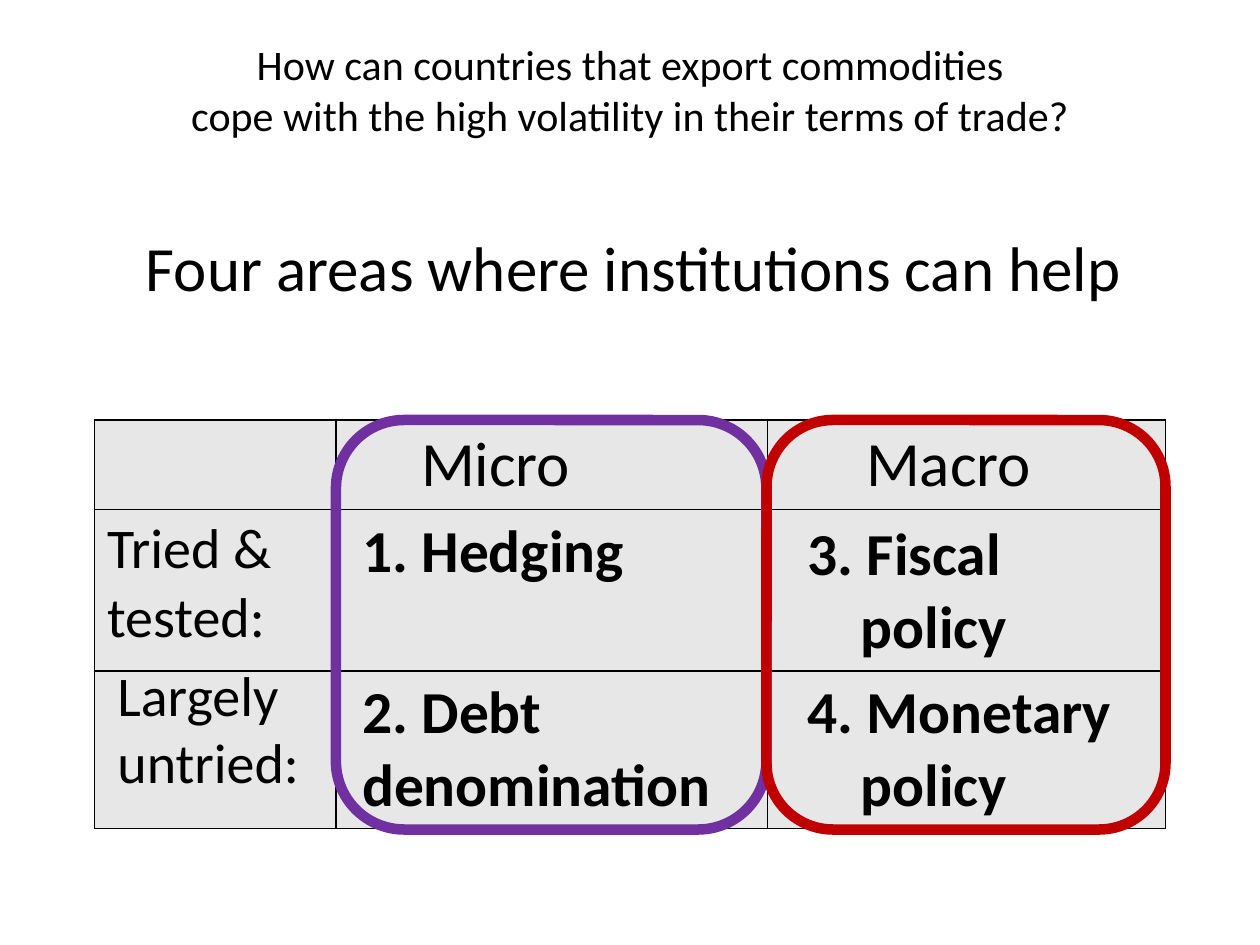
import dataclasses

import pptx
import pptx.dml.color
import pptx.enum.shapes
import pptx.enum.text
import pptx.oxml
import pptx.oxml.ns
import pptx.util

Pt = pptx.util.Pt


@dataclasses.dataclass(frozen=True)
class Theme:
    font: str = "Calibri"
    text: str = "000000"
    cell: str = "E7E7E7"
    border: str = "000000"
    micro: str = "7030A0"
    macro: str = "C00000"
    title_size: int = 24
    heading_size: int = 36
    label_size: int = 32
    item_size: int = 34
    border_width: int = 1
    frame_width: int = 6


THEME = Theme()
LEFT, TOP = 54, 240
COLUMNS = (138, 246.5, 227.5)
ROWS = (51, 92.5, 90)


def color(value):
    return pptx.dml.color.RGBColor.from_string(value)


def write(paragraph, lines, size, bold=False):
    """Add one run for each line, with line breaks between them."""
    for index, line in enumerate(lines):
        if index:
            paragraph.add_line_break()
        run = paragraph.add_run()
        run.text = line
        run.font.name = THEME.font
        run.font.size = Pt(size)
        run.font.bold = bold
        run.font.color.rgb = color(THEME.text)


def add_text(slide, box, paragraphs, size, centered=True, middle=False):
    shape = slide.shapes.add_textbox(*map(Pt, box))
    frame = shape.text_frame
    frame.word_wrap = centered
    if middle:
        frame.vertical_anchor = pptx.enum.text.MSO_ANCHOR.MIDDLE
    for index, lines in enumerate(paragraphs):
        paragraph = frame.add_paragraph() if index else frame.paragraphs[0]
        if centered:
            paragraph.alignment = pptx.enum.text.PP_ALIGN.CENTER
        write(paragraph, lines, size)


def add_borders(cell):
    properties = cell._tc.get_or_add_tcPr()
    for position, side in enumerate(("lnL", "lnR", "lnT", "lnB")):
        line = pptx.oxml.parse_xml(
            f'<a:{side} {pptx.oxml.ns.nsdecls("a")} w="{Pt(THEME.border_width)}">'
            f'<a:solidFill><a:srgbClr val="{THEME.border}"/></a:solidFill></a:{side}>'
        )
        properties.insert(position, line)


def fill_cell(cell, lines, size, bold=False, inset=7.2, hanging=0, top=3.6):
    cell.margin_left = Pt(inset)
    cell.margin_top = Pt(top)
    paragraph = cell.text_frame.paragraphs[0]
    if hanging:
        properties = paragraph._p.get_or_add_pPr()
        properties.set("marL", str(Pt(hanging)))
        properties.set("indent", str(-Pt(hanging)))
    write(paragraph, lines, size, bold)


def add_grid(slide):
    table = slide.shapes.add_table(
        len(ROWS), len(COLUMNS), Pt(LEFT), Pt(TOP), Pt(sum(COLUMNS)), Pt(sum(ROWS))
    ).table
    for column, width in zip(table.columns, COLUMNS):
        column.width = Pt(width)
    for row, height in zip(table.rows, ROWS):
        row.height = Pt(height)
    for cell in table.iter_cells():
        cell.fill.solid()
        cell.fill.fore_color.rgb = color(THEME.cell)
        add_borders(cell)

    # Column headings and row label
    fill_cell(table.cell(0, 1), ["Micro"], THEME.heading_size, inset=48.6)
    fill_cell(table.cell(0, 2), ["Macro"], THEME.heading_size, inset=56.5)
    fill_cell(table.cell(1, 0), ["Tried & ", "tested:"], THEME.label_size)

    # The four areas
    micro = {"size": THEME.item_size, "bold": True, "inset": 15}
    macro = {**micro, "inset": 23, "hanging": 30.5}
    fill_cell(table.cell(1, 1), ["1. Hedging"], **micro)
    fill_cell(table.cell(2, 1), ["2. Debt", "denomination"], **micro)
    fill_cell(table.cell(1, 2), ["3. Fiscal ", "policy"], top=5.6, **macro)
    fill_cell(table.cell(2, 2), ["4. Monetary", "policy"], **macro)


def add_frame(slide, left, width, line_color):
    shape = slide.shapes.add_shape(
        pptx.enum.shapes.MSO_SHAPE.ROUNDED_RECTANGLE, Pt(left), Pt(TOP), Pt(width), Pt(234)
    )
    shape.shadow.inherit = False
    shape.fill.background()
    shape.line.color.rgb = color(line_color)
    shape.line.width = Pt(THEME.frame_width)


def main():
    presentation = pptx.Presentation()
    presentation.slide_width, presentation.slide_height = Pt(720), Pt(540)
    slide = presentation.slides.add_slide(presentation.slide_layouts[6])

    # Title and subtitle
    title = [
        "How can countries that export commodities",
        "cope with the high volatility in their terms of trade?",
    ]
    add_text(slide, (6, 6, 708, 90), [title], THEME.title_size, middle=True)
    add_text(slide, (23, 127, 678, 72), [["Four areas where institutions can help"]],
             THEME.heading_size)

    # Table with a frame around each group
    add_grid(slide)
    add_frame(slide, 192, 246, THEME.micro)
    add_frame(slide, 438, 228, THEME.macro)

    # Label of the last row
    add_text(slide, (60, 374, 119.5, 85), [["Largely"], ["untried:"]],
             THEME.label_size, centered=False)

    presentation.save("out.pptx")


if __name__ == "__main__":
    main()
